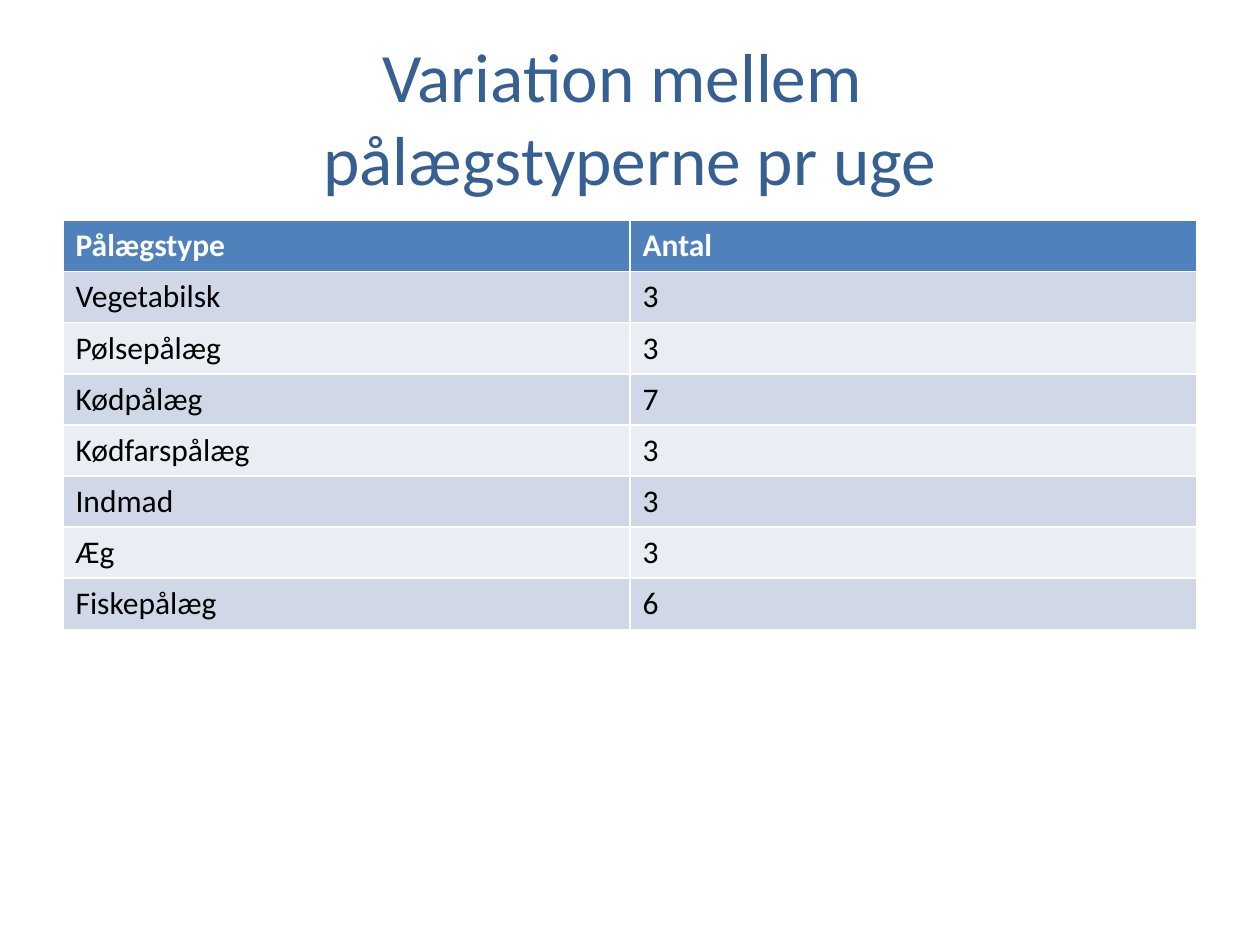
from pptx import Presentation
from pptx import util as u
from pptx.dml.color import RGBColor
from pptx.enum import text

HEADINGS = ("Pålægstype", "Antal")
WEEKLY_COUNTS = (
    ("Vegetabilsk", 3),
    ("Pølsepålæg", 3),
    ("Kødpålæg", 7),
    ("Kødfarspålæg", 3),
    ("Indmad", 3),
    ("Æg", 3),
    ("Fiskepålæg", 6),
)
HEADING_FILL = "4F81BD"
BAND_FILLS = ("D0D8E8", "E9EDF4")


def rgb(value):
    return RGBColor.from_string(value)


def format_text(paragraph, color, **values):
    font = paragraph.runs[0].font if len(paragraph.runs) == 1 else paragraph.font
    for name, value in {"name": "Calibri", **values}.items():
        setattr(font, name, value)
    font.color.rgb = rgb(color)


def write_title(slide, wording):
    title = slide.shapes.title
    box = {"left": 0.5, "top": 0.3, "width": 9, "height": 1.25}
    for name, value in box.items():
        setattr(title, name, u.Inches(value))
    frame = title.text_frame
    frame.text = wording
    frame.auto_size = text.MSO_AUTO_SIZE.NONE
    frame.vertical_anchor = text.MSO_ANCHOR.MIDDLE
    heading = frame.paragraphs[0]
    heading.alignment = text.PP_ALIGN.CENTER
    for run in heading.runs:
        run.font.size = u.Pt(39.6)
    format_text(heading, "376092", size=u.Pt(39.6))


def fill_row(cells, values, fill, color, bold):
    for cell, value in zip(cells, values):
        cell.text = str(value)
        cell.fill.solid()
        cell.fill.fore_color.rgb = rgb(fill)
        format_text(cell.text_frame.paragraphs[0], color, size=u.Pt(18), bold=bold)


def add_counts(slide):
    rows = len(WEEKLY_COUNTS) + 1
    counts = slide.shapes.add_table(
        rows, len(HEADINGS),
        u.Inches(0.5), u.Inches(1.75), u.Inches(9), u.Inches(3.24),
    ).table
    fill_row(counts.rows[0].cells, HEADINGS, HEADING_FILL, "FFFFFF", True)
    for index, entry in enumerate(WEEKLY_COUNTS):
        fill = BAND_FILLS[index % len(BAND_FILLS)]
        fill_row(counts.rows[index + 1].cells, entry, fill, "000000", False)


def main():
    deck = Presentation()
    deck.slide_width = u.Inches(10)
    deck.slide_height = u.Inches(7.5)
    slide = deck.slides.add_slide(deck.slide_layouts[5])
    write_title(slide, "Variation mellem \vpålægstyperne pr uge")
    add_counts(slide)
    deck.save("out.pptx")


if __name__ == "__main__":
    main()
